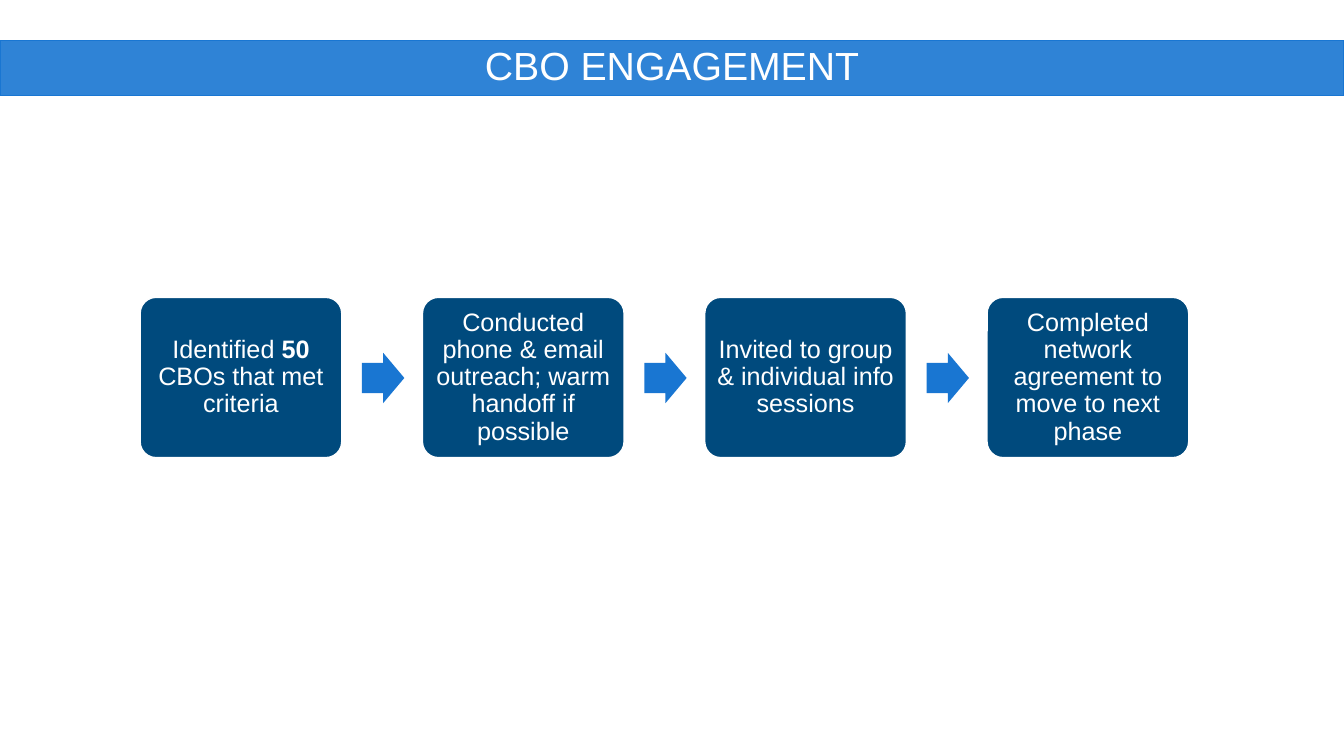
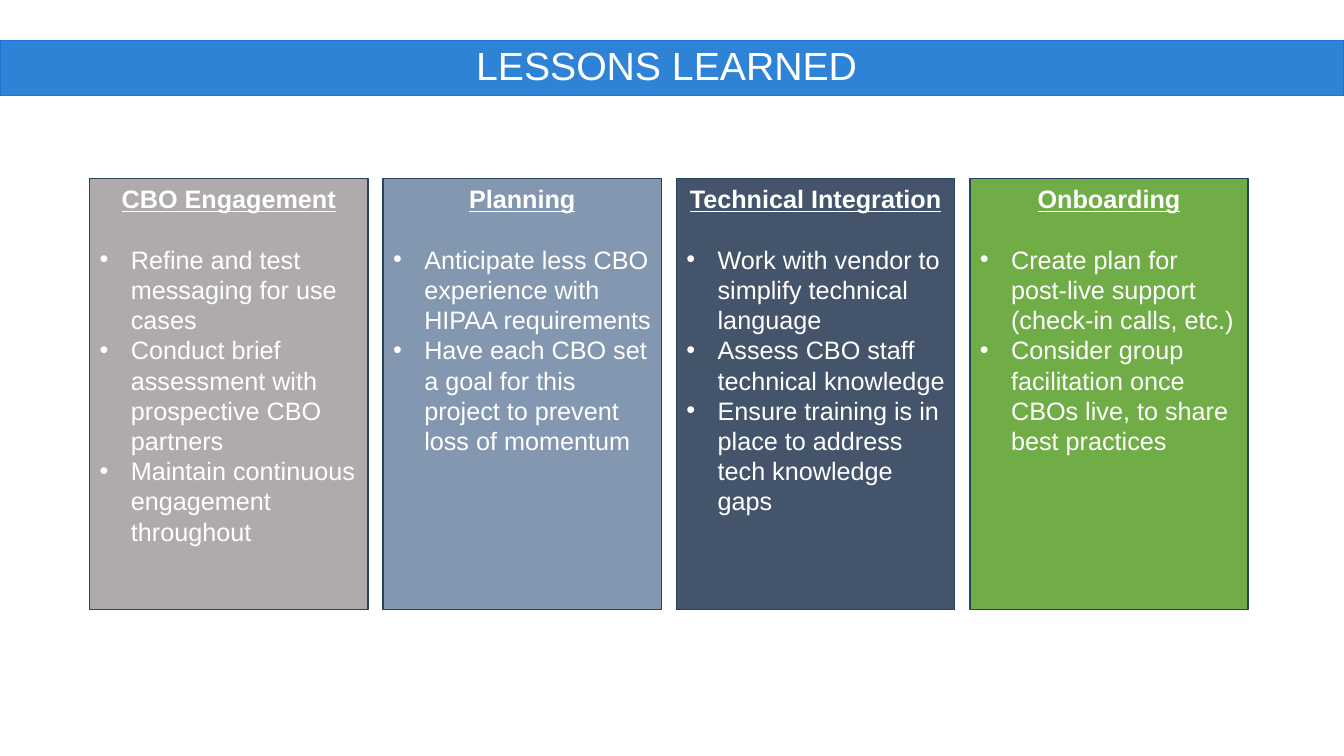
from lxml import etree
from pptx import Presentation
from pptx.dml.color import RGBColor
from pptx.enum.shapes import MSO_SHAPE as SHAPE
from pptx.enum.text import MSO_ANCHOR as ANCHOR, MSO_AUTO_SIZE as FIT, PP_ALIGN as ALIGN
from pptx.oxml.ns import qn
from pptx.util import Inches, Pt

WIDTH, HEIGHT = 13.33, 7.5
FONT = "Arial"
C = {
    "white": "FFFFFF",
    "blue": "1976D2",
    "navy": "004A7D",
    "edge": "28445D",
    "grey": "AFABAB",
    "steel": "8497B0",
    "slate": "44546A",
    "green": "70AD47",
}
STEPS = [
    [("Identified ", False), ("50", True), (" CBOs that met criteria", False)],
    [("Conducted phone & email outreach; warm handoff if possible", False)],
    [("Invited to group & individual info sessions", False)],
    [("Completed network agreement to move to next phase", False)],
]
LESSONS = [
    ("CBO Engagement", "grey", [
        "Refine and test messaging for use cases",
        "Conduct brief assessment with prospective CBO partners",
        "Maintain continuous engagement throughout",
    ]),
    ("Planning", "steel", [
        "Anticipate less CBO experience with HIPAA requirements",
        "Have each CBO set a goal for this project to prevent loss of momentum",
    ]),
    ("Technical Integration", "slate", [
        "Work with vendor to simplify technical language",
        "Assess CBO staff technical knowledge",
        "Ensure training is in place to address tech knowledge gaps",
    ]),
    ("Onboarding", "green", [
        "Create plan for post-live support (check-in calls, etc.)",
        "Consider group facilitation once CBOs live, to share best practices",
    ]),
]


def rgb(name):
    return RGBColor.from_string(C[name])


def grid(left, width, gap, count):
    return [left + i * (width + gap) for i in range(count)]


def paint(sp, fill, line=None):
    sp.fill.solid()
    sp.fill.fore_color.rgb = rgb(fill)
    if line:
        sp.line.color.rgb = rgb(line)
        sp.line.width = Pt(1)
    else:
        sp.line.fill.background()


def add_block(s, kind, box, fill, line=None, adjust=()):
    sp = s.shapes.add_shape(kind, *map(Inches, box))
    sp.shadow.inherit = False
    paint(sp, fill, line)
    for i, value in enumerate(adjust):
        sp.adjustments[i] = value
    sp.text_frame.word_wrap = True
    return sp


def add_run(p, text, size=18, bold=False, underline=False):
    r = p.add_run()
    r.text = text
    f = r.font
    f.name, f.size, f.bold, f.underline = FONT, Pt(size), bold, underline
    f.color.rgb = rgb("white")


def add_bullet(tf, text, indent=0.31):
    p = tf.add_paragraph()
    p.alignment = ALIGN.LEFT
    pPr = p._p.get_or_add_pPr()
    pPr.set("marL", str(Inches(indent)))
    pPr.set("indent", str(-Inches(indent)))
    etree.SubElement(pPr, qn("a:buFont")).set("typeface", FONT)
    etree.SubElement(pPr, qn("a:buChar")).set("char", "•")
    add_run(p, text)


def add_titled_slide(prs, title):
    s = prs.slides.add_slide(prs.slide_layouts[5])
    sp = s.shapes.title
    sp.left, sp.top, sp.width, sp.height = map(Inches, (0, 0.4, WIDTH, 0.55))
    paint(sp, "blue", "blue")
    color = sp.fill._xPr.find(qn("a:solidFill"))[0]
    etree.SubElement(color, qn("a:alpha")).set("val", "90000")
    tf = sp.text_frame
    tf.word_wrap, tf.auto_size = True, FIT.NONE
    tf.vertical_anchor = ANCHOR.MIDDLE
    p = tf.paragraphs[0]
    p.alignment, p.line_spacing = ALIGN.CENTER, 0.9
    add_run(p, title, size=28)
    return s


def add_step(s, left, runs):
    box = (left, 2.95, 2, 1.59)
    sp = add_block(s, SHAPE.ROUNDED_RECTANGLE, box, "navy", "white", [0.1])
    tf = sp.text_frame
    tf.vertical_anchor = ANCHOR.MIDDLE
    tf.margin_left = tf.margin_right = tf.margin_top = tf.margin_bottom = Inches(0.07)
    p = tf.paragraphs[0]
    p.alignment, p.line_spacing = ALIGN.CENTER, 0.9
    for text, bold in runs:
        add_run(p, text, bold=bold)


def add_lesson(s, left, width, heading, fill, bullets):
    sp = add_block(s, SHAPE.RECTANGLE, (left, 1.77, width, 4.28), fill, "edge")
    tf = sp.text_frame
    tf.vertical_anchor = ANCHOR.TOP
    p = tf.paragraphs[0]
    p.alignment, p.space_after = ALIGN.CENTER, Pt(21.6)
    add_run(p, heading, bold=True, underline=True)
    for text in bullets:
        add_bullet(tf, text)


def build_engagement(prs):
    s = add_titled_slide(prs, "CBO ENGAGEMENT")
    lefts = grid(1.39, 2, 0.8, len(STEPS))
    for left, runs in zip(lefts, STEPS):
        add_step(s, left, runs)
    for left in lefts[:-1]:
        add_block(s, SHAPE.RIGHT_ARROW, (left + 2.2, 3.5, 0.42, 0.5), "blue", adjust=[0.6, 0.5])


def build_lessons(prs):
    s = add_titled_slide(prs, "LESSONS LEARNED ")
    width = 2.76
    for left, lesson in zip(grid(0.89, width, 0.15, len(LESSONS)), LESSONS):
        add_lesson(s, left, width, *lesson)


def main():
    prs = Presentation()
    prs.slide_width, prs.slide_height = Inches(WIDTH), Inches(HEIGHT)
    build_engagement(prs)
    build_lessons(prs)
    prs.save("out.pptx")


if __name__ == "__main__":
    main()
